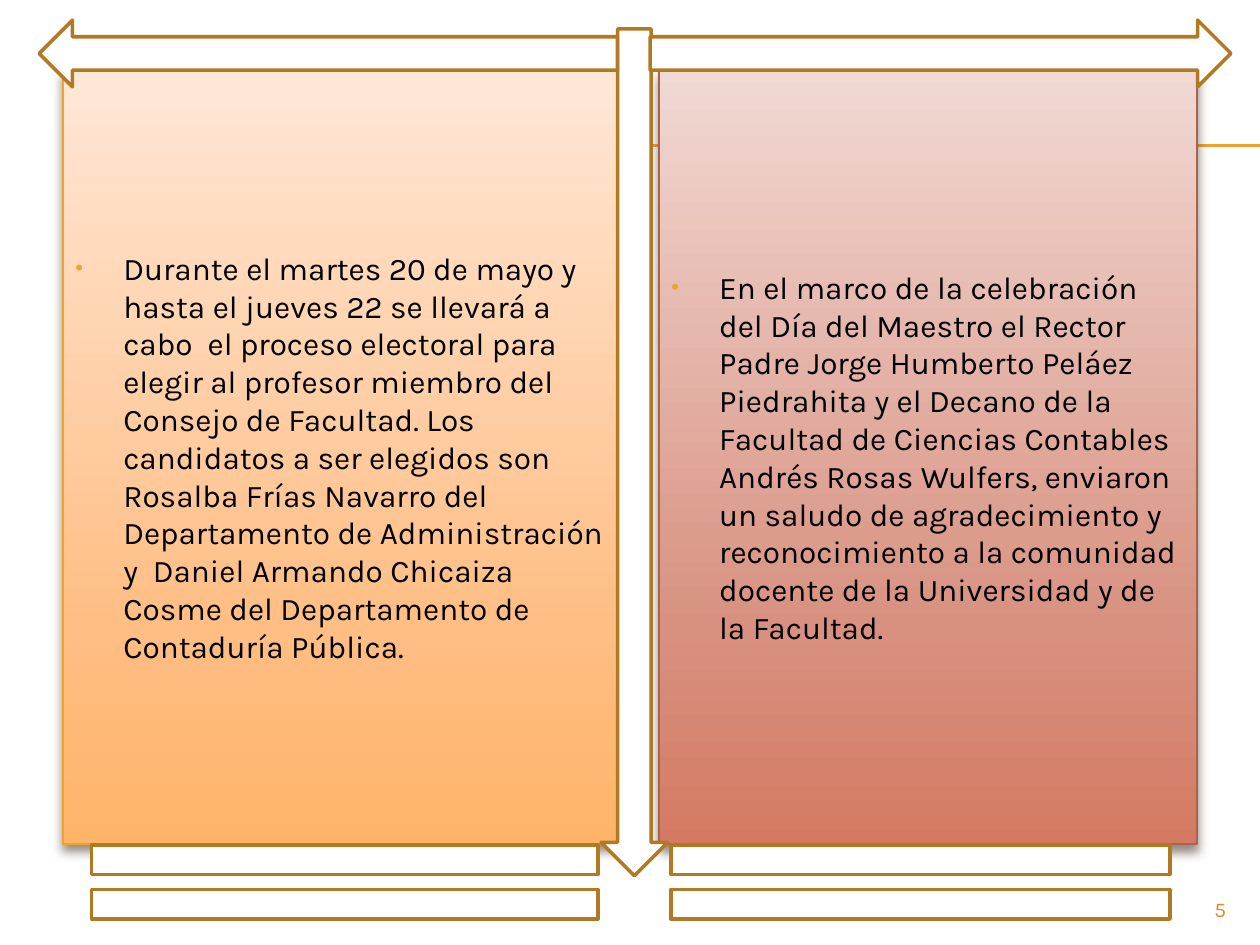
from lxml import etree
from pptx import Presentation, util as u
from pptx.dml.color import RGBColor
from pptx.enum import shapes, text
from pptx.oxml import parse_xml
from pptx.oxml.ns import nsdecls, qn

WIDTH, HEIGHT = 10, 7.5
FONT = "Karla"
WHITE = RGBColor(0xFF, 0xFF, 0xFF)
BLACK = RGBColor(0, 0, 0)
AMBER = RGBColor(0xF0, 0xA2, 0x2E)
BROWN = RGBColor(0xB2, 0x78, 0x22)
RUST = RGBColor(0xA5, 0x64, 0x4E)
NUMBER = RGBColor(0xD4, 0x8F, 0x29)
SHADOW = RGBColor(0x4E, 0x3B, 0x30)
ORANGE_FADE = [(0, RGBColor(0xFF, 0xE7, 0xD7)), (72, RGBColor(0xFF, 0xBE, 0x84)),
               (100, RGBColor(0xFF, 0xB4, 0x68))]
RUST_FADE = [(0, RGBColor(0xF1, 0xD9, 0xD4)), (72, RGBColor(0xD8, 0x91, 0x80)),
             (100, RGBColor(0xD4, 0x7A, 0x62))]
KIND = shapes.MSO_SHAPE

ELECTION = (
    "Durante el martes 20 de mayo y hasta el jueves 22 se llevará a cabo  el proceso "
    "electoral para elegir al profesor miembro del Consejo de Facultad. Los candidatos a "
    "ser elegidos son Rosalba Frías Navarro del Departamento de Administración y  Daniel "
    "Armando Chicaiza Cosme del Departamento de Contaduría Pública.")
GREETING = (
    "En el marco de la celebración del Día del Maestro el Rector Padre Jorge Humberto "
    "Peláez Piedrahita y el Decano de la Facultad de Ciencias Contables Andrés Rosas "
    "Wulfers, enviaron un saludo de agradecimiento y reconocimiento a la comunidad docente "
    "de la Universidad y de la Facultad.")


def inches(box):
    return [u.Inches(length) for length in box]


def style_run(paragraph, size, color):
    font = paragraph.runs[0].font
    font.name, font.size = FONT, u.Pt(size)
    font.color.rgb = color


def add_rule(slide, left, top, right):
    rule = slide.shapes.add_connector(
        shapes.MSO_CONNECTOR.STRAIGHT, *inches((left, top, right, top)))
    rule.line.color.rgb = AMBER
    rule.line.width = u.Pt(0.75)
    etree.SubElement(rule._element.spPr, qn("a:effectLst"))


def add_outlined(slide, kind, box):
    ornament = slide.shapes.add_shape(kind, *inches(box))
    ornament.shadow.inherit = False
    ornament.fill.solid()
    ornament.fill.fore_color.rgb = WHITE
    ornament.line.color.rgb = BROWN
    ornament.line.width = u.Pt(2)


def add_panel(slide, box, message, fade, edge):
    panel = slide.shapes.add_shape(KIND.RECTANGLE, *inches(box))
    panel.line.color.rgb = edge
    panel.line.width = u.Pt(0.79)

    # Vertical fade and soft shadow
    stops = "".join(f'<a:gs pos="{share * 1000}"><a:srgbClr val="{color}"/></a:gs>'
                    for share, color in fade)
    gradient = parse_xml(f'<a:gradFill {nsdecls("a")} rotWithShape="1"><a:gsLst>{stops}'
                         '</a:gsLst><a:lin ang="5400000" scaled="0"/></a:gradFill>')
    panel._element.spPr.find(qn("a:prstGeom")).addnext(gradient)
    panel._element.spPr.append(parse_xml(
        f'<a:effectLst {nsdecls("a")}><a:outerShdw blurRad="{u.Pt(6)}" dist="{u.Pt(4)}" '
        f'dir="5400000" rotWithShape="0"><a:srgbClr val="{SHADOW}">'
        '<a:alpha val="60000"/></a:srgbClr></a:outerShdw></a:effectLst>'))

    # Bulleted message
    frame = panel.text_frame
    frame.word_wrap = True
    frame.vertical_anchor = text.MSO_ANCHOR.MIDDLE
    frame.text = message
    paragraph = frame.paragraphs[0]
    paragraph.alignment = text.PP_ALIGN.LEFT
    indent = u.Inches(0.38)
    properties = paragraph._p.get_or_add_pPr()
    properties.set("marL", str(indent))
    properties.set("indent", str(-indent))
    for bullet in (f'<a:buClr {nsdecls("a")}><a:srgbClr val="{AMBER}"/></a:buClr>',
                   f'<a:buSzPct {nsdecls("a")} val="70000"/>',
                   f'<a:buFont {nsdecls("a")} typeface="Arial"/>',
                   f'<a:buChar {nsdecls("a")} char="•"/>'):
        properties.append(parse_xml(bullet))
    style_run(paragraph, 18, BLACK)


def add_arrows(slide, left, top, right, bottom):
    thickness = 0.53
    add_outlined(slide, KIND.DOWN_ARROW, (4.77, top + 0.07, thickness, bottom - top - 0.07))
    add_outlined(slide, KIND.RIGHT_ARROW, (5.16, top, right - 5.16, thickness))
    add_outlined(slide, KIND.LEFT_ARROW, (left, top, 4.9 - left, thickness))


def add_footer_bars(slide, top, height):
    for left, right in ((0, 5.47), (4.61, WIDTH)):
        add_outlined(slide, KIND.MATH_EQUAL, (left, top, right - left, height))


def add_page_number(slide, box, number):
    label = slide.shapes.add_textbox(*inches(box))
    frame = label.text_frame
    frame.word_wrap = True
    frame.margin_top = frame.margin_bottom = 0
    frame.vertical_anchor = text.MSO_ANCHOR.MIDDLE
    frame.text = number
    frame.paragraphs[0].alignment = text.PP_ALIGN.RIGHT
    style_run(frame.paragraphs[0], 12, NUMBER)


def main():
    deck = Presentation()
    deck.slide_width, deck.slide_height = inches((WIDTH, HEIGHT))
    slide = deck.slides.add_slide(deck.slide_layouts[6])

    # Header rules behind the panels
    for top in (1.15, 1.16):
        add_rule(slide, 0.56, top, WIDTH)

    # Two news panels
    add_panel(slide, (0.5, 0.55, 4.42, 6.15), ELECTION, ORANGE_FADE, AMBER)
    add_panel(slide, (5.23, 0.55, 4.27, 6.15), GREETING, RUST_FADE, RUST)

    # Frame of arrows and bars
    add_arrows(slide, 0.31, 0.16, 9.77, 6.95)
    add_footer_bars(slide, 6.5, HEIGHT - 6.5)
    add_page_number(slide, (9, 7.08, 0.83, 0.27), "5")

    deck.save("out.pptx")


if __name__ == "__main__":
    main()
